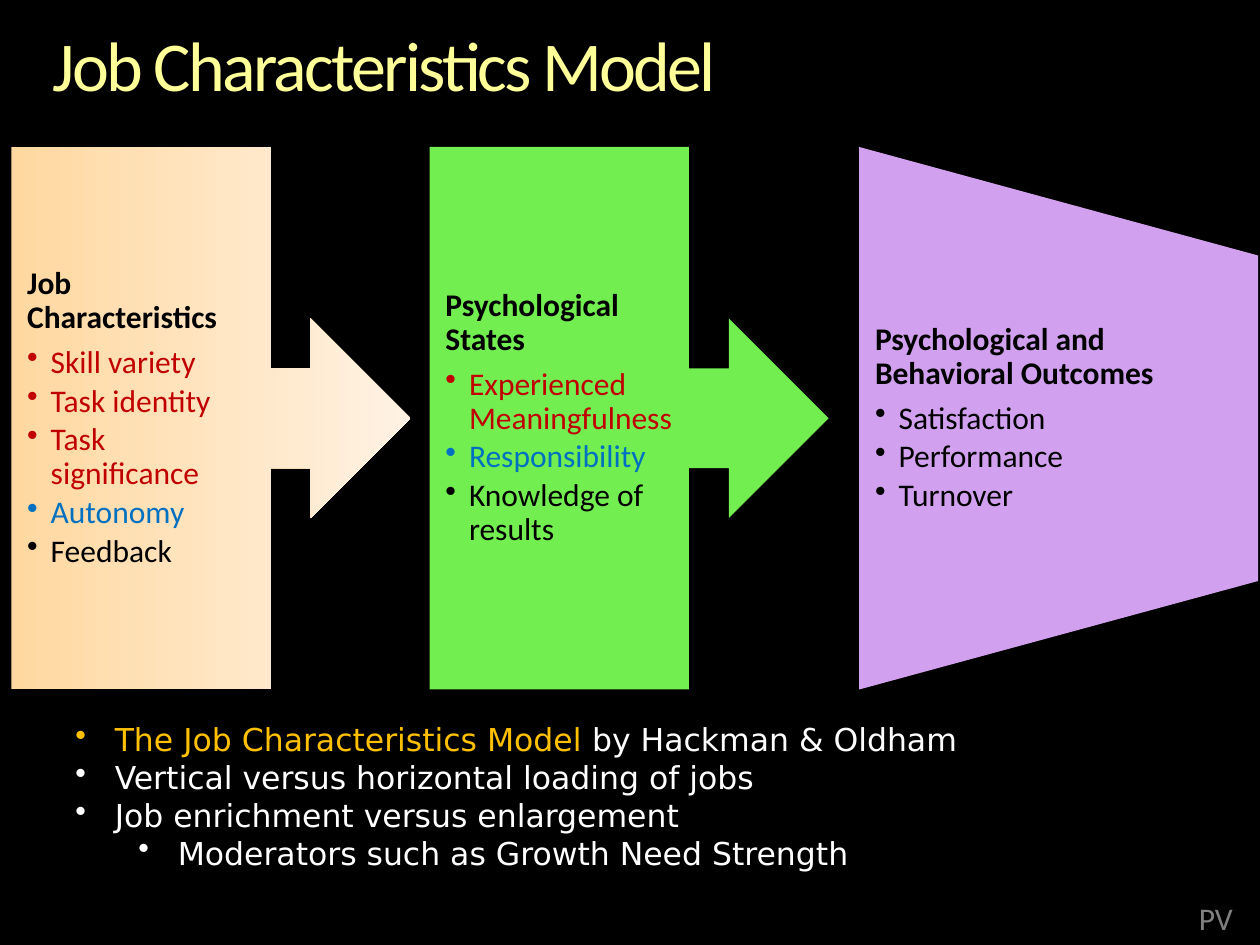
from lxml import etree
from pptx import Presentation
from pptx.dml.color import RGBColor
from pptx.enum import shapes, text
from pptx.oxml import ns
from pptx.util import Pt

BLACK, WHITE, RED, BLUE = "000000", "FFFFFF", "C00000", "0070C0"
CALLOUT = shapes.MSO_SHAPE.DOWN_ARROW_CALLOUT
TRAPEZOID = shapes.MSO_SHAPE.FLOWCHART_MANUAL_OPERATION
STAGE_TOP, STAGE_WIDTH, STAGE_HEIGHT = 84, 228, 310
CALLOUT_TEXT = (0, 0, 148.5, STAGE_HEIGHT)
TRAPEZOID_TEXT = (0, 62, STAGE_WIDTH, 186)

STAGES = [
    (6.5, CALLOUT, ("FFD8A0", "FFF2E3"), CALLOUT_TEXT, "Job Characteristics",
     [("Skill variety", RED), ("Task identity", RED), ("Task significance", RED),
      ("Autonomy", BLUE), ("Feedback", BLACK)]),
    (245.5, CALLOUT, ("73EE51",), CALLOUT_TEXT, "Psychological States",
     [("Experienced Meaningfulness", RED), ("Responsibility", BLUE),
      ("Knowledge of results", BLACK)]),
    (491, TRAPEZOID, ("D1A0EE",), TRAPEZOID_TEXT, "Psychological and Behavioral Outcomes",
     [("Satisfaction", BLACK), ("Performance", BLACK), ("Turnover", BLACK)]),
]

NOTES = [
    (0, [("The Job Characteristics Model ", "FFC000"), ("by Hackman & Oldham", WHITE)]),
    (0, [("Vertical versus horizontal loading of jobs", WHITE)]),
    (0, [("Job enrichment versus enlargement", WHITE)]),
    (1, [("Moderators such as Growth Need Strength", WHITE)]),
]


def color(value):
    return RGBColor.from_string(value)


def apply(target, values):
    for name, value in values.items():
        setattr(target, name, value)


def add_text_frame(slide, box, inset=(7.2, 3.6), anchor=text.MSO_ANCHOR.TOP):
    frame = slide.shapes.add_textbox(*map(Pt, box)).text_frame
    horizontal, vertical = map(Pt, inset)
    apply(frame, {"word_wrap": True, "vertical_anchor": anchor,
                  "margin_left": horizontal, "margin_right": horizontal,
                  "margin_top": vertical, "margin_bottom": vertical})
    return frame


def next_paragraph(frame):
    first = frame.paragraphs[0]
    return frame.add_paragraph() if first.runs else first


def add_run(paragraph, words, fill, size=18, font="Calibri", bold=False):
    run = paragraph.add_run()
    run.text = words
    apply(run.font, {"size": Pt(size), "name": font, "bold": bold})
    run.font.color.rgb = color(fill)
    return run


def add_bullet(paragraph, margin, hanging):
    properties = paragraph._p.get_or_add_pPr()
    properties.set("marL", str(Pt(margin)))
    properties.set("indent", str(-Pt(hanging)))
    etree.SubElement(properties, ns.qn("a:buChar")).set("char", "•")


def add_title(slide, box):
    paragraph = add_text_frame(slide, box, inset=(0, 0)).paragraphs[0]
    paragraph.line_spacing = 0.9
    run = add_run(paragraph, "Job Characteristics Model", "FFFF99", size=40)
    run._r.get_or_add_rPr().set("spc", "-150")


def add_stage_shape(slide, box, preset, colors):
    left, top, width, height = box
    turned = (left + (width - height) / 2, top + (height - width) / 2, height, width)
    shape = slide.shapes.add_shape(preset, *map(Pt, turned))
    shape.rotation = 270
    shape.shadow.inherit = False
    shape.line.fill.background()
    if len(colors) == 1:
        shape.fill.solid()
        shape.fill.fore_color.rgb = color(colors[0])
        return
    shape.fill.gradient()
    shape.fill.gradient_angle = 270
    for position, (stop, value) in enumerate(zip(shape.fill.gradient_stops, colors)):
        stop.position = position
        stop.color.rgb = color(value)


def add_stage(slide, box, preset, colors, text_area, heading, items):
    add_stage_shape(slide, box, preset, colors)
    x, y, width, height = text_area
    frame = add_text_frame(slide, (box[0] + x, box[1] + y, width, height),
                           inset=(9, 0), anchor=text.MSO_ANCHOR.MIDDLE)
    paragraph = next_paragraph(frame)
    apply(paragraph, {"line_spacing": 0.9, "space_after": Pt(6.3)})
    add_run(paragraph, heading, BLACK, bold=True)
    for words, fill in items:
        paragraph = next_paragraph(frame)
        add_bullet(paragraph, 13.5, 13.5)
        apply(paragraph, {"level": 1, "line_spacing": 0.9, "space_after": Pt(2.7)})
        add_run(paragraph, words, fill)


def add_notes(slide, box):
    frame = add_text_frame(slide, box)
    for level, runs in NOTES:
        paragraph = next_paragraph(frame)
        add_bullet(paragraph, 22.5 + 36 * level, 22.5)
        paragraph.level = level
        for words, fill in runs:
            add_run(paragraph, words, fill, font="DejaVu Sans")


def add_initials(slide, box):
    add_run(add_text_frame(slide, box).paragraphs[0], "PV", "808080")


def main():
    presentation = Presentation()
    apply(presentation, {"slide_width": Pt(720), "slide_height": Pt(540)})
    slide = presentation.slides.add_slide(presentation.slide_layouts[6])
    slide.background.fill.solid()
    slide.background.fill.fore_color.rgb = color(BLACK)
    add_initials(slide, (678, 510, 42, 29))
    add_title(slide, (30, 18, 660, 63))
    for left, *details in STAGES:
        add_stage(slide, (left, STAGE_TOP, STAGE_WIDTH, STAGE_HEIGHT), *details)
    add_notes(slide, (36, 408, 624, 94))
    presentation.save("out.pptx")


if __name__ == "__main__":
    main()
